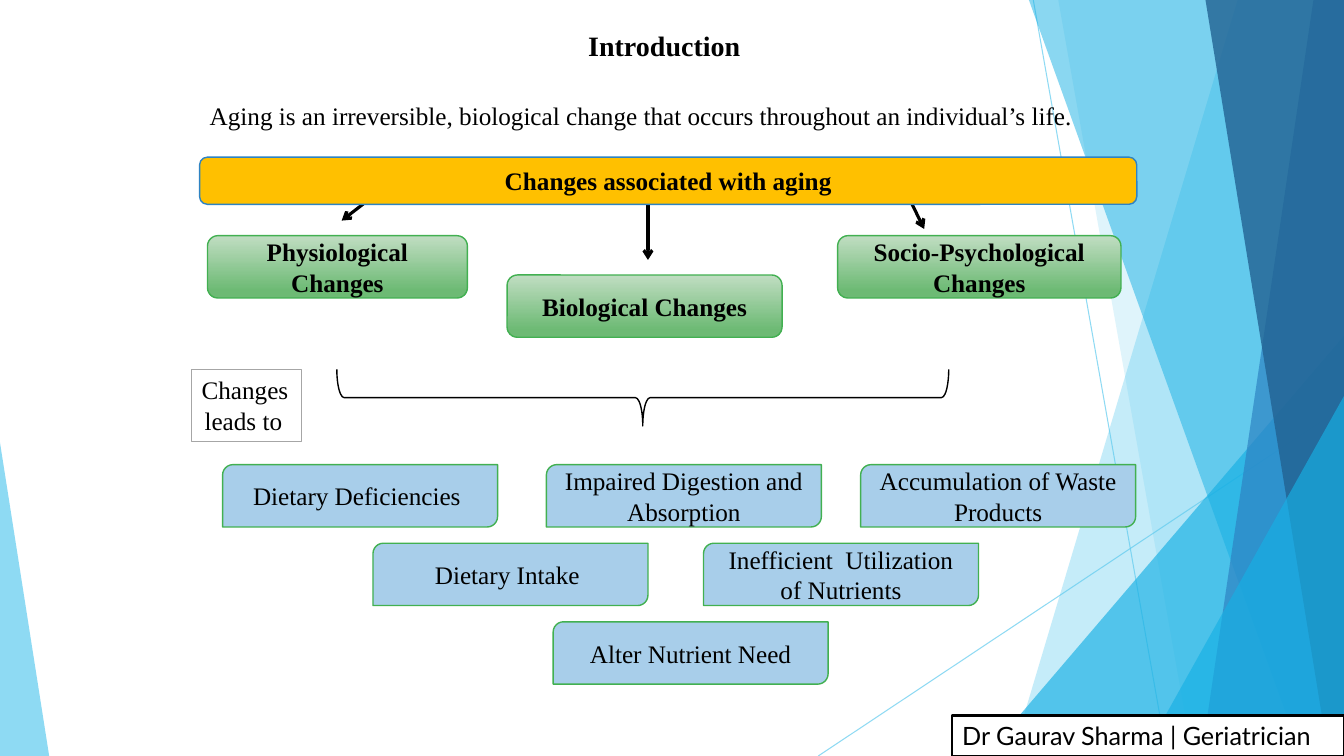
from lxml.etree import SubElement
from pptx import Presentation
from pptx.dml.color import RGBColor
from pptx.enum.shapes import MSO_CONNECTOR, MSO_SHAPE as Shape
from pptx.enum.text import MSO_ANCHOR as Anchor, PP_ALIGN as Align
from pptx.oxml.ns import qn
from pptx.util import Cm, Pt

COLORS = {
    "ink": "000000", "paper": "FFFFFF", "gray": "A6A6A6", "gold": "FFC000",
    "sky": "5FCBEF", "azure": "17B0E4", "blue": "2E83C3", "navy": "226292",
    "mint": "C0DDC2", "leaf": "6DBA74", "green": "42B051", "pale": "A8CEEA",
}
WIDTH, HEIGHT = 33.87, 19.05


def rgb(name):
    return RGBColor.from_string(COLORS[name])


def set_alpha(element, percent):
    """Make the first colour of a shape or connector partly transparent."""
    color = element.spPr.find(".//" + qn("a:srgbClr"))
    SubElement(color, qn("a:alpha")).set("val", str(percent * 1000))


class SlideBuilder:
    font = "Times New Roman"

    def __init__(self, deck):
        self.slide = deck.slides.add_slide(deck.slide_layouts[1])
        self.shapes = self.slide.shapes

    def add_text(self, frame, lines, aligns=(Align.CENTER,), size=18, bold=False,
                 anchor=Anchor.MIDDLE, font=None):
        frame.word_wrap = True
        frame.vertical_anchor = anchor
        for number, (line, align) in enumerate(zip(lines, aligns)):
            paragraph = frame.add_paragraph() if number else frame.paragraphs[0]
            paragraph.alignment = align
            paragraph.space_before = Pt(0)
            run = paragraph.add_run()
            run.text = line
            run.font.name = font or self.font
            run.font.size = Pt(size)
            run.font.bold = bold
            run.font.color.rgb = rgb("ink")

    def paint(self, shape, fill=None, line=None, width=1, alpha=None):
        """Fill with one colour name, a pair for a gradient, or nothing."""
        shape.shadow.inherit = False
        if fill is None:
            shape.fill.background()
        elif isinstance(fill, tuple):
            shape.fill.gradient()
            shape.fill.gradient_angle = 270
            for stop, name, position in zip(shape.fill.gradient_stops, fill, (0, 0.88)):
                stop.color.rgb = rgb(name)
                stop.position = position
        else:
            shape.fill.solid()
            shape.fill.fore_color.rgb = rgb(fill)
        if line:
            shape.line.color.rgb = rgb(line)
            shape.line.width = Pt(width)
        else:
            shape.line.fill.background()
        if alpha:
            set_alpha(shape.element, alpha)

    def add_preset(self, kind, box, adjustments=(), **style):
        shape = self.shapes.add_shape(kind, *map(Cm, box))
        for number, value in enumerate(adjustments):
            shape.adjustments[number] = value
        self.paint(shape, **style)
        return shape

    def add_band(self, top_left, bottom_left, fill, alpha):
        """Draw a full-height band that reaches the right edge."""
        builder = self.shapes.build_freeform(Cm(top_left), 0)
        corners = [(WIDTH, 0), (WIDTH, HEIGHT), (bottom_left, HEIGHT)]
        builder.add_line_segments([(Cm(x), Cm(y)) for x, y in corners])
        self.paint(builder.convert_to_shape(), fill, alpha=alpha)

    def add_line(self, ends, color, width, alpha=None, arrow=False):
        line = self.shapes.add_connector(MSO_CONNECTOR.STRAIGHT, *map(Cm, ends))
        line.line.color.rgb = rgb(color)
        line.line.width = Pt(width)
        if alpha:
            set_alpha(line.element, alpha)
        if arrow:
            outline = line.element.spPr.find(qn("a:ln"))
            SubElement(outline, qn("a:tailEnd")).set("type", "arrow")
        SubElement(line.element.spPr, qn("a:effectLst"))

    def fill_placeholder(self, placeholder, box, text, **style):
        """Move a placeholder to the front and into its box, then add its text."""
        placeholder.element.getparent().append(placeholder.element)
        placeholder.left, placeholder.top, placeholder.width, placeholder.height = map(Cm, box)
        self.add_text(placeholder.text_frame, [text], anchor=Anchor.TOP, **style)


def add_backdrop(page):
    page.add_line((26.04, 0, 29.41, HEIGHT), "sky", 0.75, alpha=70)
    page.add_line((WIDTH, 10.24, 20.62, HEIGHT), "sky", 0.75, alpha=70)
    page.add_band(31.19, 25.5, "sky", 36)
    page.add_band(26.67, 30.05, "sky", 20)
    page.add_preset(Shape.ISOSCELES_TRIANGLE, (24.82, 8.46, 9.05, 10.59), [1],
                    fill="azure", alpha=66)
    page.add_band(25.93, 32.79, "azure", 50)
    page.add_band(33.1, 30.28, "blue", 70)
    page.add_band(30.38, 33.48, "navy", 80)
    page.add_preset(Shape.ISOSCELES_TRIANGLE, (28.8, 9.98, 5.07, 9.07), [1],
                    fill="azure", alpha=66)
    page.add_preset(Shape.ISOSCELES_TRIANGLE, (0, 11.15, 1.24, 7.9), [0],
                    fill="sky", alpha=70)
    author = page.add_preset(Shape.RECTANGLE, (24, 18.03, 9.87, 1.02),
                             fill="paper", line="ink", width=1.5)
    page.add_text(author.text_frame, ["Dr Gaurav Sharma | Geriatrician"], [Align.LEFT],
                  anchor=Anchor.TOP, font="Lato")


def add_heading(page):
    banner = page.add_preset(Shape.ROUNDED_RECTANGLE, (5.03, 3.96, 23.62, 1.19),
                             fill="gold", line="blue")
    page.add_text(banner.text_frame, ["Changes associated with aging"], bold=True)
    definition = page.slide.placeholders[1]
    properties = definition.text_frame.paragraphs[0]._p.get_or_add_pPr()
    properties.set("marL", str(Cm(0.5)))
    properties.set("indent", str(Cm(-0.5)))
    SubElement(properties, qn("a:buNone"))
    page.fill_placeholder(
        definition, (5.03, 2.39, 24, 1.02),
        "Aging is an irreversible, biological change that occurs throughout "
        "an individual’s life.", aligns=[Align.LEFT])
    page.fill_placeholder(page.shapes.title, (12.17, 0.58, 9.32, 1.12),
                          "Introduction ", size=20, bold=True)


def add_changes(page):
    changes = [
        ("Physiological Changes", 5.23, 5.94, 6.55),
        ("Socio-Psychological Changes", 21.11, 5.94, 7.14),
        ("Biological Changes", 12.78, 6.93, 6.93),
    ]
    for name, left, top, width in changes:
        change = page.add_preset(Shape.ROUNDED_RECTANGLE, (left, top, width, 1.57),
                                 fill=("mint", "leaf"), line="green")
        page.add_text(change.text_frame, [name], bold=True)


def add_effects(page):
    brace = page.add_preset(Shape.LEFT_BRACE, (15.49, 2.31, 1.42, 15.42),
                            [0.13, 0.5], line="ink")
    brace.rotation = 270
    leads_to = page.add_preset(Shape.RECTANGLE, (4.83, 9.32, 2.77, 1.8),
                               line="gray", width=0.75)
    page.add_text(leads_to.text_frame, ["Changes", "leads to "],
                  [Align.LEFT, Align.CENTER], anchor=Anchor.TOP)
    effect_rows = [
        [("Dietary Deficiencies ", 5.61), ("Impaired Digestion and Absorption", 13.77),
         ("Accumulation of Waste Products", 21.69)],
        [("Dietary Intake ", 9.4), ("Inefficient  Utilization of Nutrients", 17.73)],
        [("Alter Nutrient Need", 13.94)],
    ]
    for row, effects in enumerate(effect_rows):
        for name, left in effects:
            effect = page.add_preset(Shape.ROUND_2_DIAG_RECTANGLE,
                                     (left, 11.71 + 1.98 * row, 6.93, 1.57),
                                     fill="pale", line="green")
            page.add_text(effect.text_frame, [name])


def main():
    deck = Presentation()
    deck.slide_width, deck.slide_height = Cm(WIDTH), Cm(HEIGHT)
    page = SlideBuilder(deck)
    add_backdrop(page)
    for ends in [(9.4, 4.95, 8.61, 5.56), (16.33, 4.95, 16.33, 6.55),
                 (22.89, 4.95, 23.29, 5.77)]:
        page.add_line(ends, "ink", 2.25, arrow=True)
    add_heading(page)
    add_changes(page)
    add_effects(page)
    deck.save("out.pptx")


if __name__ == "__main__":
    main()
